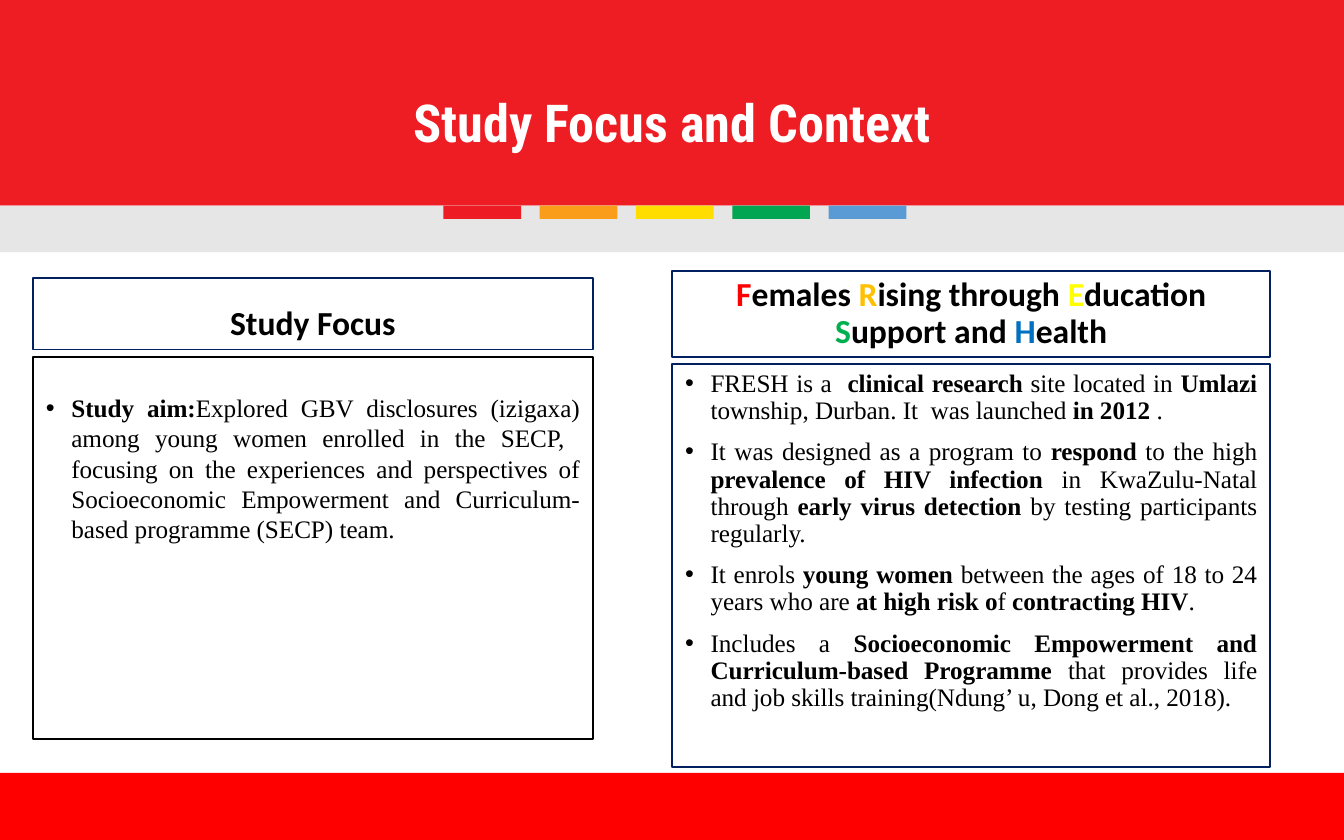
import pptx
import pptx.util
import pptx.dml.color
import pptx.enum.shapes
import pptx.enum.text
from lxml import etree
from pptx.util import Cm, Pt

HUES = {
    "band": "ED1D23", "foot": "FF0000", "grey": "E7E6E6",
    "white": "FFFFFF", "black": "000000", "navy": "002060",
    "red": "FF0000", "gold": "FFC000", "yellow": "FFFF00",
    "green": "00B050", "blue": "0070C0",
    "chip1": "ED1B23", "chip2": "F99D1A", "chip3": "FFDD00",
    "chip4": "00A651", "chip5": "5B9BD5",
}
ALIGN = pptx.enum.text.PP_ALIGN
ANCHOR = pptx.enum.text.MSO_ANCHOR
AIM = [
    "*Study aim:*Explored GBV disclosures (izigaxa) among young women enrolled "
    "in the SECP,  focusing on the experiences and perspectives of Socioeconomic "
    "Empowerment and Curriculum-based programme (SECP) team. ",
]
FACTS = [
    "FRESH is a  *clinical research *site located in *Umlazi* township, Durban. "
    "It  was launched *in 2012 *.",
    "It was designed as a program to *respond* to the high *prevalence of HIV "
    "infection *in KwaZulu-Natal through *early virus detection* by testing "
    "participants regularly.",
    "It enrols *young women *between the ages of 18 to 24 years who are "
    "*at high risk o*f *contracting HIV*.",
    "Includes a *Socioeconomic Empowerment and Curriculum-based Programme *that "
    "provides life and job skills training(Ndung’ u, Dong et al., 2018). ",
]
NAME = [
    ("F", "red"), ("emales ", "black"), ("R", "gold"), ("ising through ", "black"),
    ("E", "yellow"), ("ducation ", "black"), ("S", "green"), ("upport and ", "black"),
    ("H", "blue"), ("ealth", "black"),
]


def color(key):
    return pptx.dml.color.RGBColor.from_string(HUES[key])


def add_box(slide, left, top, width, height, fill=None, line=None):
    box = slide.shapes.add_shape(
        pptx.enum.shapes.MSO_SHAPE.RECTANGLE,
        Cm(left), Cm(top), Cm(width), Cm(height))
    box.shadow.inherit = False
    if fill:
        box.fill.solid()
        box.fill.fore_color.rgb = color(fill)
    else:
        box.fill.background()
    if line:
        box.line.color.rgb = color(line)
        box.line.width = Pt(1)
    else:
        box.line.fill.background()
    return box


def set_font(para, face, size, bold=None):
    para.font.name = face
    para.font.size = Pt(size)
    para.font.bold = bold


def add_head(shape, runs, face, size, anchor):
    """Fill a shape with one centred bold line of (text, hue) runs."""
    frame = shape.text_frame
    frame.word_wrap = True
    frame.vertical_anchor = anchor
    para = frame.paragraphs[0]
    para.alignment = ALIGN.CENTER
    para.line_spacing = 0.9
    set_font(para, face, size, True)
    for text, hue in runs:
        run = para.add_run()
        run.text = text
        run.font.color.rgb = color(hue)


def add_bullet(para):
    props = para._p.get_or_add_pPr()
    props.set("marL", str(Cm(0.48)))
    props.set("indent", str(-Cm(0.48)))
    for tag, key, value in (("buFont", "typeface", "Arial"), ("buChar", "char", "•")):
        item = etree.SubElement(props, pptx.oxml.ns.qn("a:" + tag))
        item.set(key, value)


def add_list(shape, items, spacing, inset=0.13):
    """Fill a shape with bullets; text between asterisks is bold."""
    frame = shape.text_frame
    frame.word_wrap = True
    frame.vertical_anchor = ANCHOR.TOP
    frame.margin_top = Cm(inset)
    for index, item in enumerate(items):
        para = frame.add_paragraph() if index else frame.paragraphs[0]
        add_bullet(para)
        para.alignment = ALIGN.JUSTIFY
        para.line_spacing = spacing
        if index:
            para.space_before = Pt(7.5)
        set_font(para, "Times New Roman", 13.5)
        para.font.color.rgb = color("black")
        for place, text in enumerate(item.split("*")):
            if text:
                run = para.add_run()
                run.text = text
                run.font.bold = place % 2 == 1
                run.font.color.rgb = color("black")


def add_bands(slide):
    add_box(slide, 0, 14.61, 25.4, 1.27, "foot")
    add_box(slide, 0, 0, 25.4, 3.89, "band")
    add_box(slide, 0, 3.89, 25.4, 0.88, "grey")
    for index in range(5):
        add_box(slide, 8.38 + 1.82 * index, 3.89, 1.47, 0.25, f"chip{index + 1}")


def main():
    deck = pptx.Presentation()
    deck.slide_width, deck.slide_height = Cm(25.4), Cm(15.88)
    slide = deck.slides.add_slide(deck.slide_layouts[6])
    add_bands(slide)

    title = slide.shapes.add_textbox(Cm(1.75), Cm(0.84), Cm(21.9), Cm(3.07))
    add_head(title, [("Study Focus and Context", "white")],
             "Roboto Condensed", 28, ANCHOR.MIDDLE)

    focus = add_box(slide, 0.62, 5.26, 10.59, 1.35, line="navy")
    add_head(focus, [("Study Focus", "black")], "Calibri", 18, ANCHOR.BOTTOM)
    aim = add_box(slide, 0.62, 6.75, 10.59, 7.22, line="black")
    add_list(aim, AIM, 1.0, inset=0.67)

    name = add_box(slide, 12.7, 5.12, 11.31, 1.63, line="navy")
    add_head(name, NAME, "Calibri", 18, ANCHOR.BOTTOM)
    facts = add_box(slide, 12.7, 6.88, 11.31, 7.62, line="navy")
    add_list(facts, FACTS, 0.9)

    deck.save("out.pptx")


if __name__ == "__main__":
    main()
